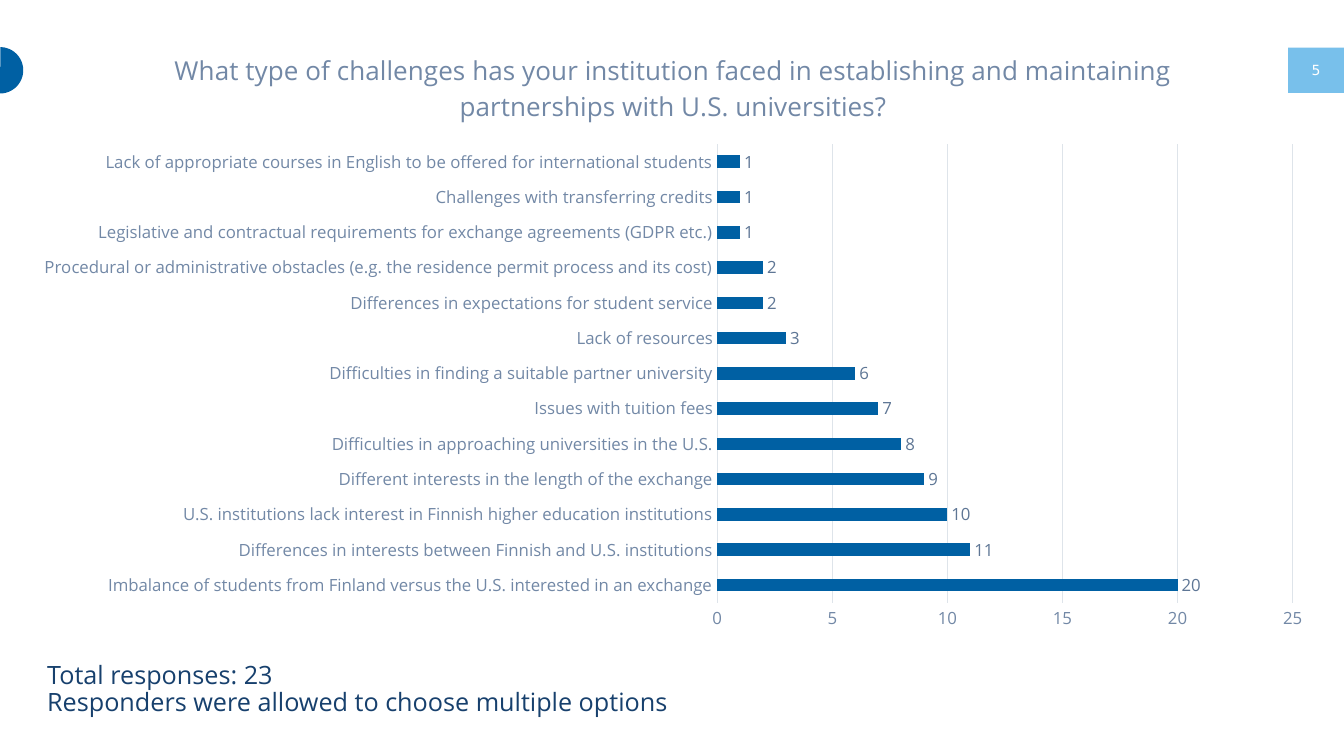
"""Build a slide with a bar chart of partnership challenges."""
import pptx
import pptx.chart.data
import pptx.dml.color
import pptx.enum.chart
import pptx.enum.shapes
import pptx.enum.text
import pptx.util

Pt = pptx.util.Pt
Kind = pptx.enum.shapes.MSO_SHAPE
Align = pptx.enum.text.PP_ALIGN
Anchor = pptx.enum.text.MSO_ANCHOR
Mark = pptx.enum.chart.XL_TICK_MARK

TITLE = ("What type of challenges has your institution faced in establishing "
         "and maintaining partnerships with U.S. universities?")
ITEMS = [
    ("Imbalance of students from Finland versus the U.S. interested in an exchange", 20),
    ("Differences in interests between Finnish and U.S. institutions", 11),
    ("U.S. institutions lack interest in Finnish higher education institutions", 10),
    ("Different interests in the length of the exchange", 9),
    ("Difficulties in approaching universities in the U.S.", 8),
    ("Issues with tuition fees", 7),
    ("Difficulties in finding a suitable partner university", 6),
    ("Lack of resources", 3),
    ("Differences in expectations for student service", 2),
    ("Procedural or administrative obstacles (e.g. the residence permit process and its cost)", 2),
    ("Legislative and contractual requirements for exchange agreements (GDPR etc.)", 1),
    ("Challenges with transferring credits", 1),
    ("Lack of appropriate courses in English to be offered for international students", 1),
]
NOTES = ["Total responses: 23", "Responders were allowed to choose multiple options"]
PAGE = "5"
FACE = "Open Sans"
BLUE, SKY, NAVY, WHITE = "0060A3", "78C0EB", "17406D", "FFFFFF"
GREY, SLATE, INK, PALE = "7288A6", "5E7695", "3C4B5F", "DEE4EA"


def tint(target, code):
    """Set a colour on a font or a fill from a hex string."""
    fill = getattr(target, "fill", target)
    fill.solid()
    fill.fore_color.rgb = pptx.dml.color.RGBColor.from_string(code)


def style(font, size, code, face=FACE):
    """Set size, colour and face of a font."""
    font.size, font.name, font.bold = Pt(size), face, False
    tint(font, code)


def rule(line):
    """Make a line thin and pale."""
    line.width = Pt(0.75)
    tint(line, PALE)


def badge(slide, kind, box, code):
    """Add a flat shape without an outline."""
    shape = slide.shapes.add_shape(kind, *map(Pt, box))
    shape.shadow.inherit = False
    tint(shape, code)
    shape.line.fill.background()
    return shape


def decor(slide):
    """Add the page number tab and the half disc."""
    tab = badge(slide, Kind.RECTANGLE, (920.2, 34, 39.8, 32.4), SKY)
    frame = tab.text_frame
    frame.margin_left = frame.margin_right = 0
    frame.vertical_anchor = Anchor.MIDDLE
    frame.text = PAGE
    para = frame.paragraphs[0]
    para.alignment = Align.CENTER
    style(para.font, 10, WHITE, "DejaVu Sans")
    disc = badge(slide, Kind.CHORD, (-16.6, 33.6, 33.2, 33.2), BLUE)
    disc.adjustments[0], disc.adjustments[1] = 41.26, 148.55
    disc.rotation = 202


def notes(slide):
    """Add the remarks below the chart."""
    box = slide.shapes.add_textbox(Pt(26.6), Pt(470), Pt(469.4), Pt(51))
    frame = box.text_frame
    frame.word_wrap = True
    frame.text = "\n".join(NOTES)
    for para in frame.paragraphs:
        para.line_spacing = 0.9
        style(para.font, 18, NAVY)


def graph(slide):
    """Add the bar chart."""
    data = pptx.chart.data.CategoryChartData()
    names, counts = zip(*ITEMS)
    data.categories = names
    data.add_series("Series 1", counts)
    chart = slide.shapes.add_chart(
        pptx.enum.chart.XL_CHART_TYPE.BAR_CLUSTERED,
        Pt(13), Pt(19.4), Pt(936), Pt(439.2), data).chart
    style(chart.font, 10, INK)
    chart.has_legend = False
    chart.has_title = True
    chart.chart_title.include_in_layout = False
    frame = chart.chart_title.text_frame
    frame.text = TITLE
    style(frame.paragraphs[0].font, 18.6, GREY)

    for axis in (chart.category_axis, chart.value_axis):
        axis.major_tick_mark = axis.minor_tick_mark = Mark.NONE
        style(axis.tick_labels.font, 12, GREY)
    rule(chart.category_axis.format.line)
    scale = chart.value_axis
    scale.minimum_scale, scale.maximum_scale, scale.major_unit = 0, 25, 5
    scale.format.line.fill.background()
    rule(scale.major_gridlines.format.line)

    plot = chart.plots[0]
    plot.gap_width = 182
    plot.vary_by_categories = False
    bars = plot.series[0]
    bars.invert_if_negative = False
    tint(bars.format, BLUE)
    labels = bars.data_labels
    labels.show_value = True
    labels.position = pptx.enum.chart.XL_LABEL_POSITION.OUTSIDE_END
    style(labels.font, 12, SLATE)


def main():
    """Build and save the deck."""
    deck = pptx.Presentation()
    deck.slide_width, deck.slide_height = Pt(960), Pt(540)
    slide = deck.slides.add_slide(deck.slide_layouts[6])
    decor(slide)
    notes(slide)
    graph(slide)
    deck.save("out.pptx")


if __name__ == "__main__":
    main()
